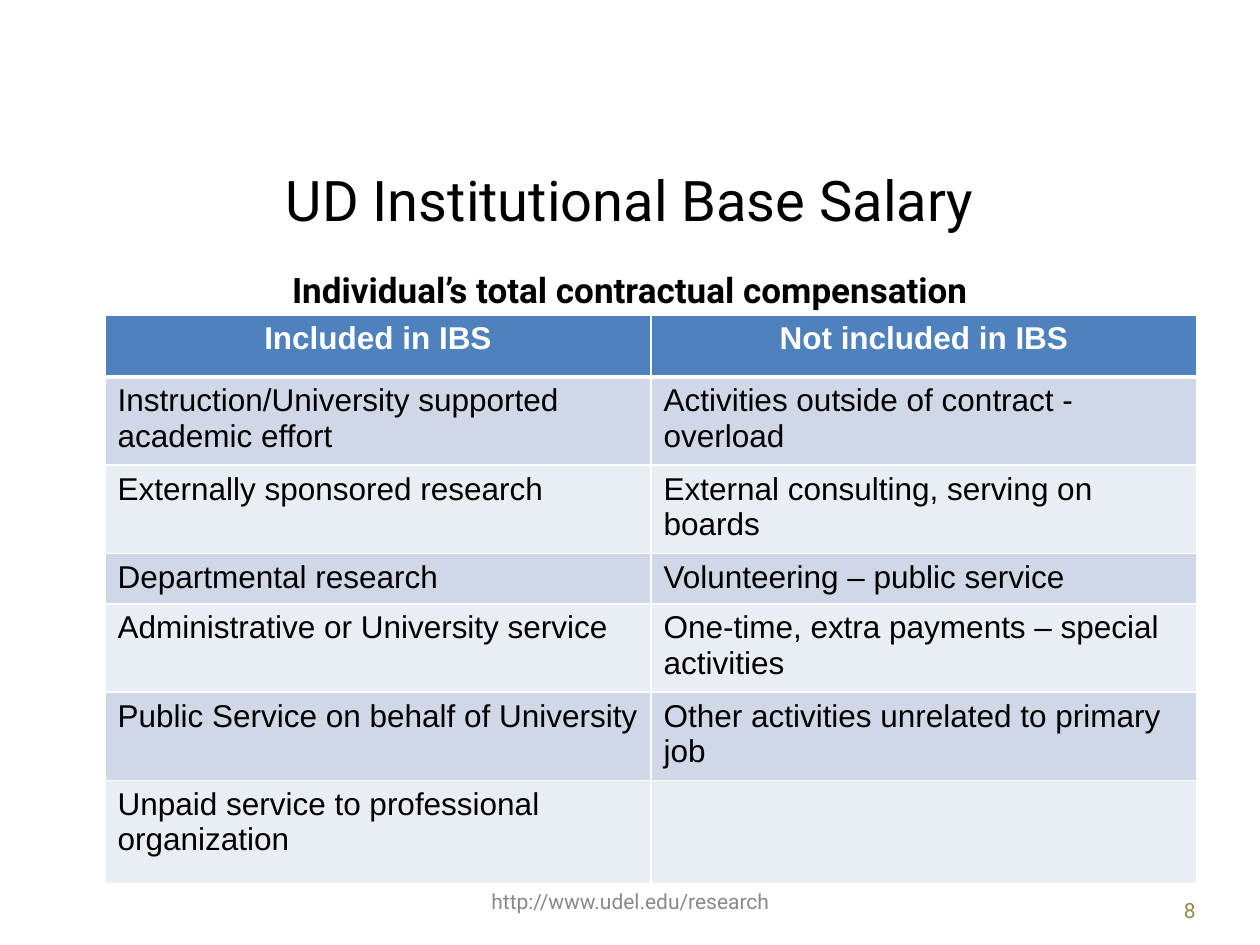
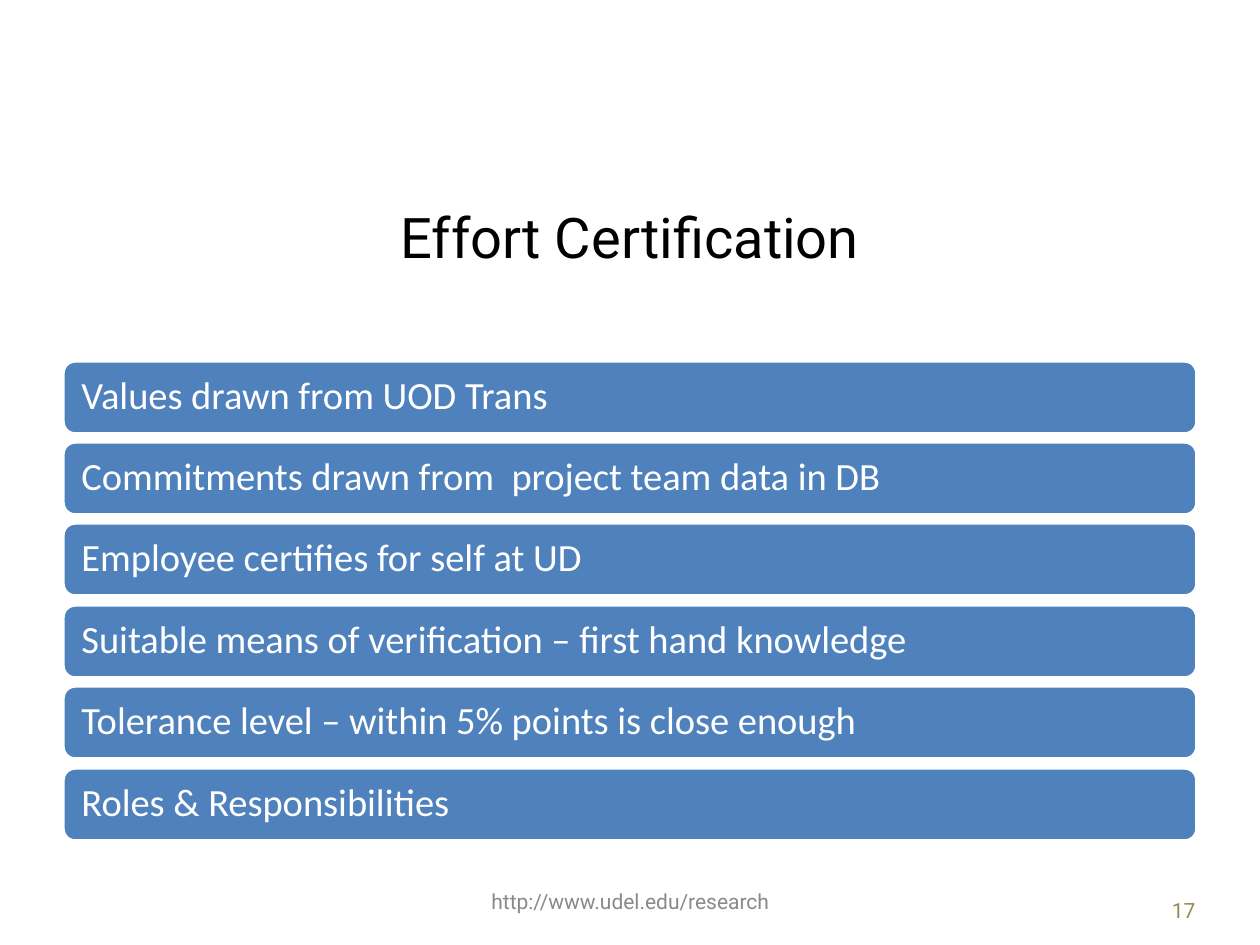
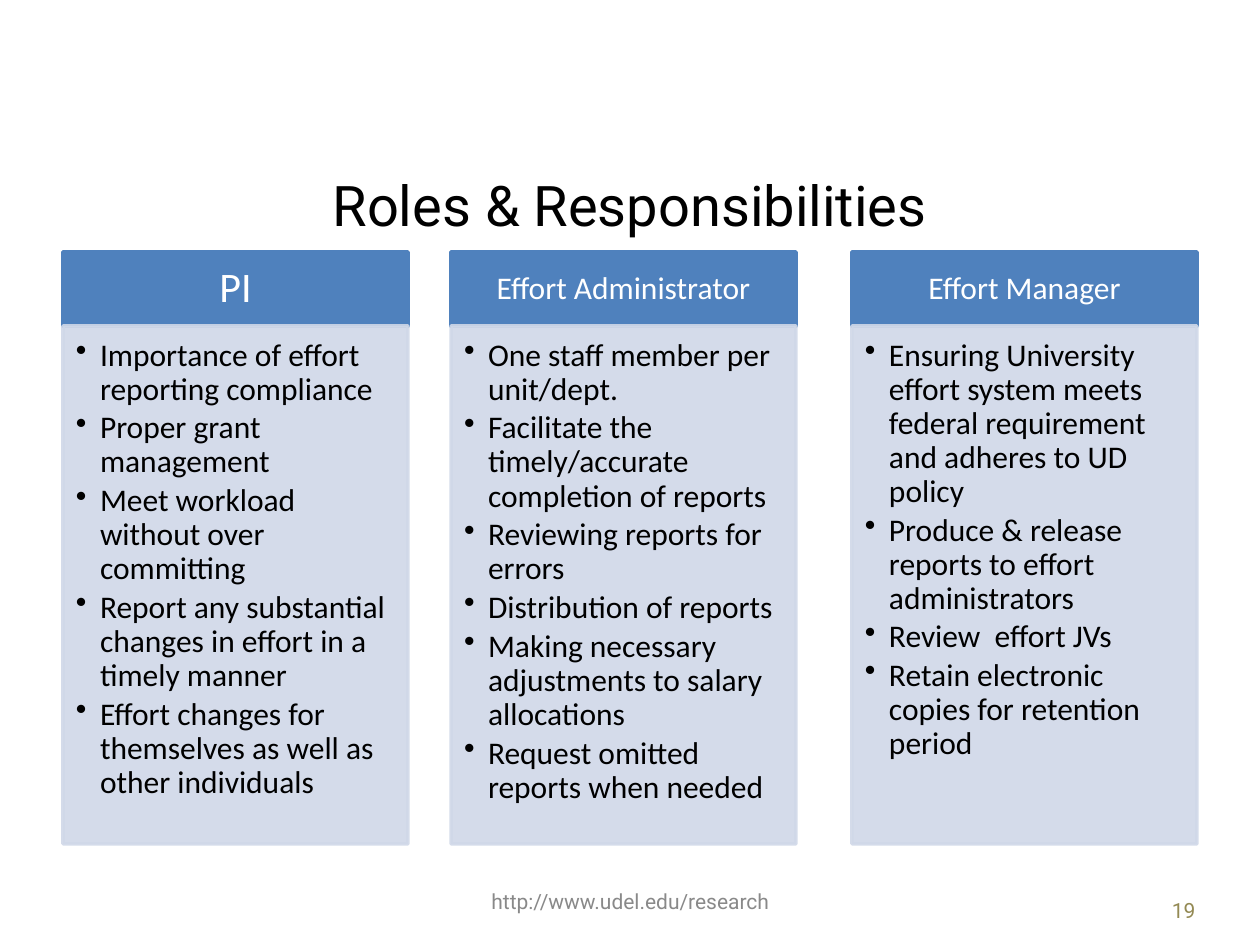
"""Build three slides on base salary and effort reporting."""
from lxml.etree import SubElement
from pptx import Presentation
from pptx.dml.color import RGBColor
from pptx.enum.shapes import MSO_SHAPE
from pptx.enum.text import MSO_ANCHOR, PP_ALIGN
from pptx.oxml import parse_xml
from pptx.oxml.ns import nsdecls, qn
from pptx.util import Pt

HUES = {"ink": "000000", "white": "FFFFFF", "blue": "4F81BD", "band": "D0D8E8",
        "pale": "E9EDF4", "gray": "898989", "tan": "948A54"}


def style(face, size, hue, align=PP_ALIGN.LEFT, bold=False, **para):
    """Gather the format values of one kind of text."""
    return {"hue": hue, "font": {"name": face, "size": Pt(size), "bold": bold},
            "para": {"alignment": align, **para}}


TITLE = style("Roboto", 32, "ink", PP_ALIGN.CENTER)
LEAD = style("Roboto", 20, "ink", PP_ALIGN.CENTER, True)
LINK = style("Roboto", 12, "gray", PP_ALIGN.CENTER)
PAGE = style("Roboto", 12, "tan", PP_ALIGN.RIGHT)
HEAD = style("Arial", 18, "white", PP_ALIGN.CENTER, True)
CELL = style("Arial", 18, "ink")
PILL = style("Calibri", 22, "white", line_spacing=0.9)
POINT = style("Calibri", 18, "ink", line_spacing=0.9, space_after=Pt(2.7))

PAY = [
    ("Included in IBS", "Not included in IBS"),
    ("Instruction/University supported academic effort",
     "Activities outside of contract - overload"),
    ("Externally sponsored research", "External consulting, serving on boards"),
    ("Departmental research", "Volunteering – public service"),
    ("Administrative or University service",
     "One-time, extra payments – special activities"),
    ("Public Service on behalf of University",
     "Other activities unrelated to primary job"),
    ("Unpaid service to professional organization", ""),
]
FACTS = [
    "Values drawn from UOD Trans",
    "Commitments drawn from  project team data in DB",
    "Employee certifies for self at UD",
    "Suitable means of verification – first hand knowledge",
    "Tolerance level – within 5% points is close enough",
    "Roles & Responsibilities",
]
ROLES = [
    (63, "PI", 24, [
        "Importance of effort reporting compliance",
        "Proper grant management",
        "Meet workload without over committing",
        "Report any substantial changes in effort in a timely manner",
        "Effort changes for themselves as well as other individuals"]),
    (451, "Effort Administrator", 18, [
        "One staff member per unit/dept.",
        "Facilitate the timely/accurate completion of reports",
        "Reviewing reports for errors",
        "Distribution of reports",
        "Making necessary adjustments to salary allocations",
        "Request omitted reports when needed"]),
    (852, "Effort Manager", 18, [
        "Ensuring University effort system meets federal requirement "
        "and adheres to UD policy",
        "Produce & release reports to effort administrators",
        "Review  effort JVs",
        "Retain electronic copies for retention period"]),
]


def px(count):
    """Turn pixels into EMU."""
    return round(count * 914400 / 126)


def tint(hue):
    """Look up a colour."""
    return RGBColor.from_string(HUES[hue])


def apply(thing, values):
    """Set each format value on an object."""
    for name, value in values.items():
        setattr(thing, name, value)


def dot(para):
    """Give a paragraph a hanging bullet."""
    props = para._p.get_or_add_pPr()
    props.set("marL", str(px(24)))
    props.set("indent", str(-px(24)))
    SubElement(props, qn("a:buChar")).set("char", "•")


def write(frame, lines, look, anchor=MSO_ANCHOR.MIDDLE, pads=None, dots=False):
    """Fill a text frame with styled paragraphs."""
    apply(frame, {"word_wrap": True, "vertical_anchor": anchor})
    if pads:
        sides = ("margin_left", "margin_top", "margin_right", "margin_bottom")
        apply(frame, dict(zip(sides, map(px, pads))))
    for spot, line in enumerate(lines):
        para = frame.add_paragraph() if spot else frame.paragraphs[0]
        para.text = line
        if dots:
            dot(para)
        apply(para, look["para"])
        apply(para.font, look["font"])
        para.font.color.rgb = tint(look["hue"])


def label(slide, box, text, look, anchor=MSO_ANCHOR.MIDDLE):
    """Add a text box."""
    frame = slide.shapes.add_textbox(*map(px, box)).text_frame
    write(frame, [text], look, anchor)


def block(slide, kind, box, fill, line, alpha=None):
    """Add a filled shape and return its text frame."""
    shape = slide.shapes.add_shape(kind, *map(px, box))
    shape.shadow.inherit = False
    shape.fill.solid()
    shape.fill.fore_color.rgb = tint(fill)
    shape.line.color.rgb = tint(line)
    shape.line.width = Pt(2)
    if alpha:
        for node in shape.element.spPr.iter(qn("a:srgbClr")):
            SubElement(node, qn("a:alpha")).set("val", str(alpha * 1000))
    return shape.text_frame


def edge(cell, base):
    """Draw white cell borders, with the given base width in points."""
    props = cell._tc.get_or_add_tcPr()
    for spot, (side, width) in enumerate(zip("LRTB", (1, 1, 1, base))):
        props.insert(spot, parse_xml(
            f'<a:ln{side} {nsdecls("a")} w="{Pt(width)}"><a:solidFill>'
            f'<a:srgbClr val="{HUES["white"]}"/></a:solidFill></a:ln{side}>'))


def grid(slide, box, rows, heights):
    """Add a table with a header and banded rows."""
    table = slide.shapes.add_table(len(rows), len(rows[0]), *map(px, box)).table
    table.horz_banding = False
    for r, (row, height) in enumerate(zip(rows, heights)):
        table.rows[r].height = px(height)
        for c, text in enumerate(row):
            cell = table.cell(r, c)
            cell.fill.solid()
            hue = ("pale", "band")[r % 2] if r else "blue"
            cell.fill.fore_color.rgb = tint(hue)
            edge(cell, 1 if r else 3)
            write(cell.text_frame, [text], CELL if r else HEAD)
            cell.vertical_anchor = MSO_ANCHOR.TOP


def start(deck, title, height, page):
    """Add a slide with its title and footer."""
    slide = deck.slides.add_slide(deck.slide_layouts[6])
    label(slide, (63, 157, 1134, height), title, TITLE)
    label(slide, (431, 876, 399, 50), "http://www.udel.edu/research", LINK)
    label(slide, (1092, 885, 116, 50), str(page), PAGE)
    return slide


def main():
    """Build and save the deck."""
    deck = Presentation()
    apply(deck, {"slide_width": px(1260), "slide_height": px(945)})

    slide = start(deck, "UD Institutional Base Salary", 85, 8)
    label(slide, (63, 262, 1134, 582),
          "Individual’s total contractual compensation", LEAD, MSO_ANCHOR.TOP)
    grid(slide, (105, 315, 1092, 519), PAY, (62, 79, 57, 47, 78, 69, 103))

    slide = start(deck, "Effort Certification", 158, 17)
    for spot, fact in enumerate(FACTS):
        box = (63, 361 + spot * 407 // 5, 1134, 73)
        frame = block(slide, MSO_SHAPE.ROUNDED_RECTANGLE, box, "blue", "white")
        write(frame, [fact], PILL, pads=(15, 15, 15, 15))

    slide = start(deck, "Roles & Responsibilities", 95, 19)
    for left, role, size, tasks in ROLES:
        frame = block(slide, MSO_SHAPE.RECTANGLE, (left, 252, 345, 74), "blue", "blue")
        look = style("Calibri", size, "white", PP_ALIGN.CENTER, line_spacing=0.9)
        write(frame, [role], look, pads=(18, 10, 18, 10))
        frame = block(slide, MSO_SHAPE.RECTANGLE, (left, 326, 345, 518),
                      "band", "band", 90)
        write(frame, tasks, POINT, MSO_ANCHOR.TOP, (13, 13, 18, 20), True)

    deck.save("out.pptx")


if __name__ == "__main__":
    main()
